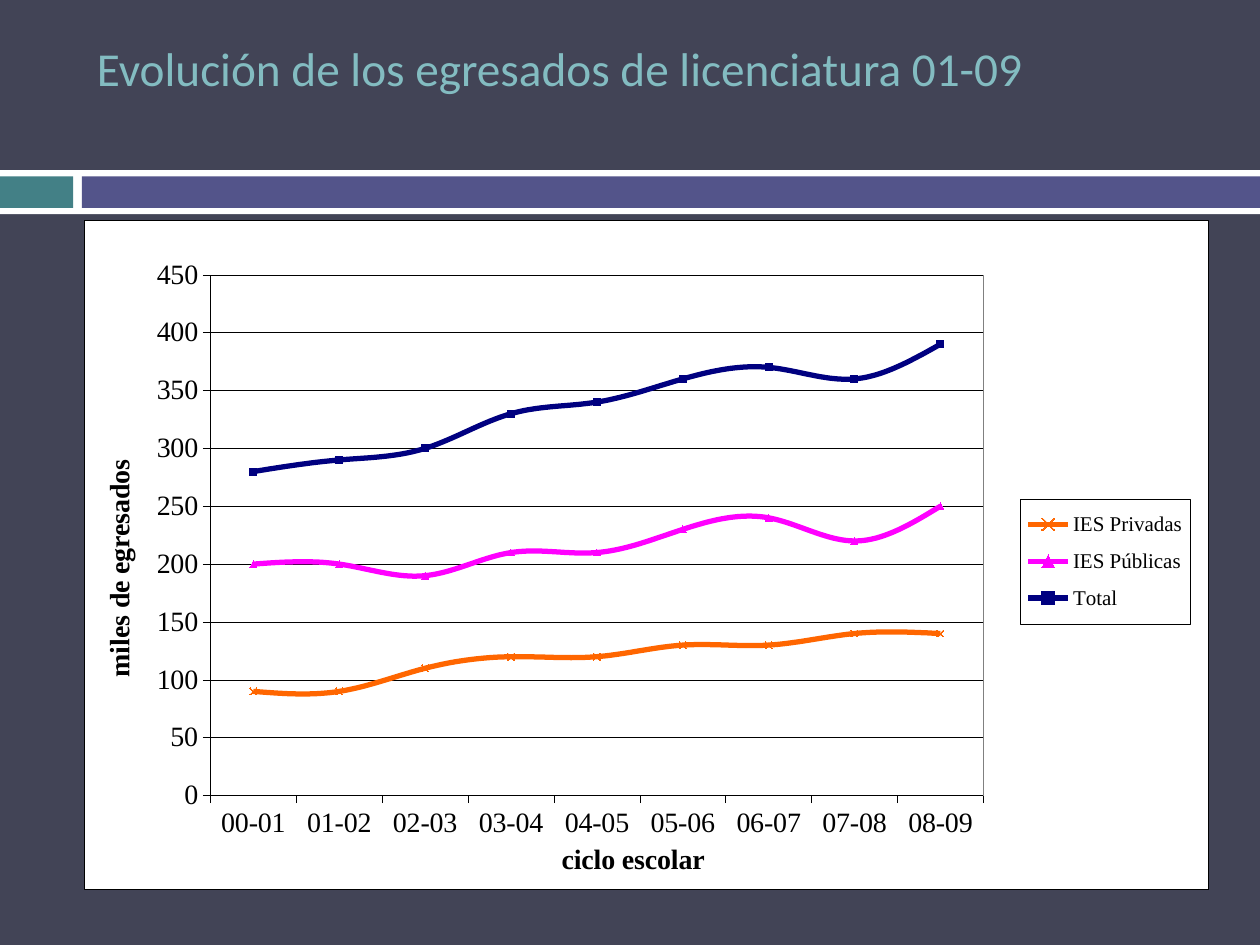
from lxml import etree
from pptx import Presentation
from pptx.chart.data import CategoryChartData
from pptx.dml.color import RGBColor
from pptx.enum.chart import XL_CHART_TYPE, XL_LEGEND_POSITION, XL_MARKER_STYLE, XL_TICK_MARK
from pptx.enum.shapes import MSO_SHAPE
from pptx.enum.text import MSO_ANCHOR
from pptx.oxml import parse_xml
from pptx.oxml.ns import nsdecls, qn
from pptx.util import Inches, Pt

SERIF = "Times New Roman"
CYCLES = ["00-01", "01-02", "02-03", "03-04", "04-05",
          "05-06", "06-07", "07-08", "08-09"]
SERIES = [
    ("IES Privadas", "FF6600", XL_MARKER_STYLE.X,
     [90, 90, 110, 120, 120, 130, 130, 140, 140]),
    ("IES Públicas", "FF00FF", XL_MARKER_STYLE.TRIANGLE,
     [200, 200, 190, 210, 210, 230, 240, 220, 250]),
    ("Total", "000080", XL_MARKER_STYLE.SQUARE,
     [280, 290, 300, 330, 340, 360, 370, 360, 390]),
]


def color(code):
    return RGBColor.from_string(code)


def set_font(font, name, size, code, bold=False):
    font.name, font.size, font.bold = name, Pt(size), bold
    font.color.rgb = color(code)


def set_line(line, code, width):
    line.color.rgb = color(code)
    line.width = Pt(width)


def add_bar(slide, left, top, width, height, code):
    bar = slide.shapes.add_shape(MSO_SHAPE.RECTANGLE, Inches(left), Inches(top),
                                 Inches(width), Inches(height))
    bar.shadow.inherit = False
    bar.fill.solid()
    bar.fill.fore_color.rgb = color(code)
    bar.line.fill.background()


def add_band(slide, left, top, width, height):
    """White band with a short teal bar and a long violet bar inside."""
    pad, short, gap = 0.05, 0.58, 0.07
    add_bar(slide, left, top, width, height, "FFFFFF")
    add_bar(slide, left, top + pad, short, height - 2 * pad, "438086")
    add_bar(slide, left + short + gap, top + pad, width - short - gap,
            height - 2 * pad, "53548A")


def add_title(slide, left, top, width, height):
    frame = slide.shapes.add_textbox(Inches(left), Inches(top),
                                     Inches(width), Inches(height)).text_frame
    frame.word_wrap = True
    frame.vertical_anchor = MSO_ANCHOR.TOP
    frame.margin_top = Inches(0.06)
    run = frame.paragraphs[0].add_run()
    run.text = "Evolución de los egresados de licenciatura 01-09"
    set_font(run.font, "Calibri", 27, "83BCC1")


def set_layout(node, index, inner=False, **box):
    """Place a chart part by fractions of the chart area."""
    layout = node.find(qn("c:layout"))
    if layout is None:
        layout = etree.Element(qn("c:layout"))
        node.insert(index, layout)
    manual = etree.SubElement(layout, qn("c:manualLayout"))
    items = [("layoutTarget", "inner")] if inner else []
    items += [("xMode", "edge"), ("yMode", "edge")]
    items += [(key, str(val)) for key, val in box.items()]
    for tag, val in items:
        etree.SubElement(manual, qn("c:" + tag)).set("val", val)


def area_style(fill, line):
    """Fill and thin border for the chart area, plot area or legend."""
    return parse_xml(
        f'<c:spPr {nsdecls("c", "a")}><a:solidFill><a:srgbClr val="{fill}"/></a:solidFill>'
        f'<a:ln w="3175"><a:solidFill><a:srgbClr val="{line}"/></a:solidFill></a:ln></c:spPr>')


def style_axis(axis, text, x, y):
    set_font(axis.tick_labels.font, SERIF, 16, "000000")
    set_line(axis.format.line, "000000", 0.25)
    axis.major_tick_mark = XL_TICK_MARK.OUTSIDE
    axis.minor_tick_mark = XL_TICK_MARK.NONE
    run = axis.axis_title.text_frame.paragraphs[0].add_run()
    run.text = text
    set_font(run.font, SERIF, 16, "000000", True)
    set_layout(axis.axis_title._element, 1, x=x, y=y)


def style_series(series, code, mark):
    series.smooth = True
    set_line(series.format.line, code, 3)
    series.marker.style, series.marker.size = mark, 4
    series.marker.format.fill.solid()
    series.marker.format.fill.fore_color.rgb = color(code)
    set_line(series.marker.format.line, code, 0.75)


def add_legend(chart):
    chart.has_legend = True
    legend = chart.legend
    legend.position = XL_LEGEND_POSITION.RIGHT
    legend.include_in_layout = False
    set_font(legend.font, SERIF, 12, "000000")
    node = legend._element
    set_layout(node, 1, x=0.833, y=0.416, w=0.151, h=0.187)
    node.find(qn("c:overlay")).addnext(area_style("FFFFFF", "000000"))


def add_graph(slide, left, top, width, height):
    data = CategoryChartData(number_format="0")
    data.categories = CYCLES
    for name, _, _, vals in SERIES:
        data.add_series(name, vals)
    chart = slide.shapes.add_chart(XL_CHART_TYPE.LINE_MARKERS, Inches(left), Inches(top),
                                   Inches(width), Inches(height), data).chart
    chart.has_title = False
    set_font(chart.font, "Arial", 10, "000000")
    plot = chart.plots[0]
    plot.vary_by_categories = False
    for series, (_, code, mark, _) in zip(plot.series, SERIES):
        style_series(series, code, mark)

    # Axes
    style_axis(chart.category_axis, "ciclo escolar", 0.42, 0.92)
    axis = chart.value_axis
    style_axis(axis, "miles de egresados", 0.01, 0.35)
    axis.minimum_scale, axis.maximum_scale, axis.major_unit = 0, 450, 50
    axis.tick_labels.number_format = "0"
    axis.tick_labels.number_format_is_linked = False
    axis.has_major_gridlines = True
    set_line(axis.major_gridlines.format.line, "000000", 0.25)

    # Legend, plot area and chart area
    add_legend(chart)
    root = chart._chartSpace.find(qn("c:chart"))
    area = root.find(qn("c:plotArea"))
    set_layout(area, 0, inner=True, x=0.112, y=0.081, w=0.688, h=0.779)
    area.append(area_style("FFFFFF", "808080"))
    root.addnext(area_style("FFFFFF", "000000"))


def main():
    deck = Presentation()
    deck.slide_width, deck.slide_height = Inches(10), Inches(7.5)
    slide = deck.slides.add_slide(deck.slide_layouts[6])
    slide.background.fill.solid()
    slide.background.fill.fore_color.rgb = color("424456")
    add_band(slide, 0, 1.35, 10, 0.35)
    add_title(slide, 0.67, 0.25, 8.92, 1.08)
    add_graph(slide, 0.67, 1.75, 8.92, 5.31)
    deck.save("out.pptx")


if __name__ == "__main__":
    main()
